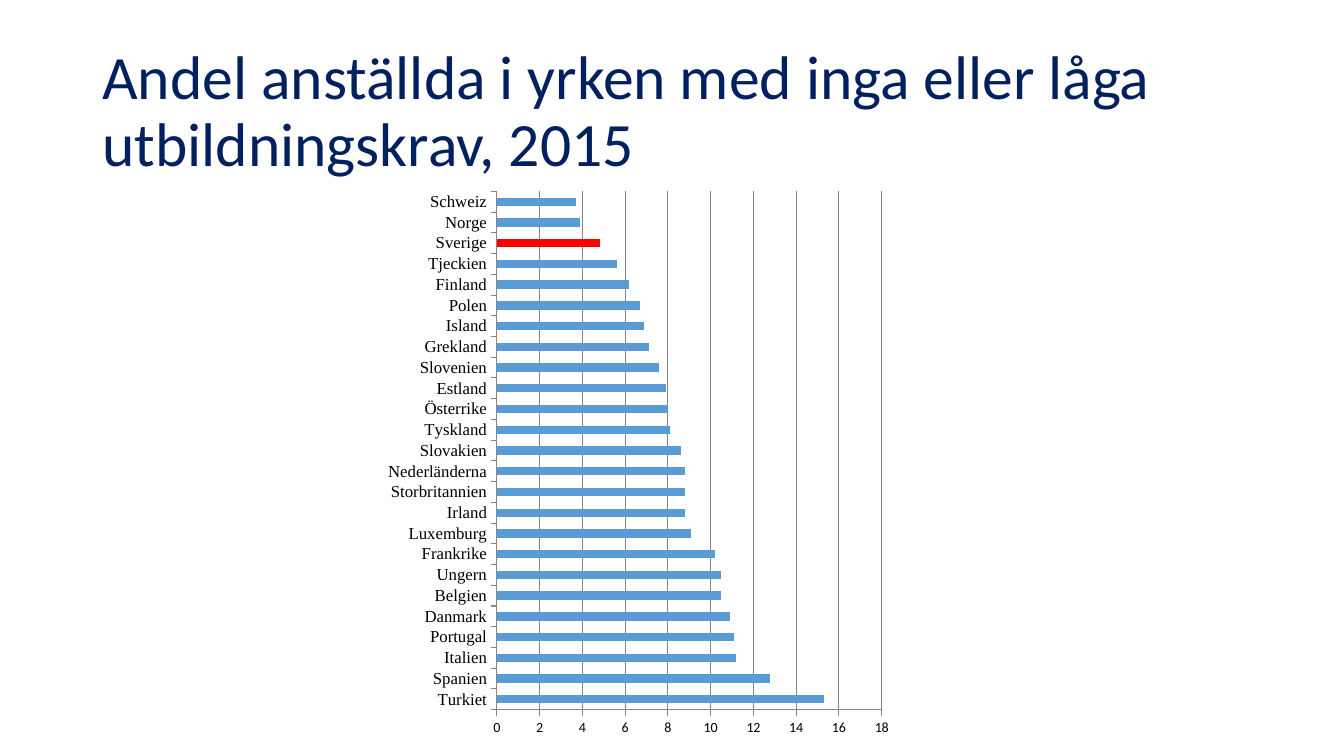
"""Build a slide with a bar chart of jobs with low educational requirements."""
from dataclasses import dataclass

from pptx import Presentation
from pptx.chart.data import CategoryChartData
from pptx.dml.color import RGBColor
from pptx.enum.chart import XL_CHART_TYPE, XL_TICK_MARK
from pptx.enum.text import MSO_ANCHOR
from pptx.oxml import parse_xml
from pptx.oxml.ns import nsdecls
from pptx.util import Emu, Pt

BAR_CLUSTERED = XL_CHART_TYPE.BAR_CLUSTERED
TICK_OUT, TICK_NONE = XL_TICK_MARK.OUTSIDE, XL_TICK_MARK.NONE
MIDDLE = MSO_ANCHOR.MIDDLE
EMU_PER_PX = 9525
SANS, SERIF = "Calibri", "Times New Roman"
NAVY, BLUE, RED, GREY, BLACK = "002060", "5B9BD5", "FF0000", "868686", "000000"


@dataclass(frozen=True)
class Box:
    left: int
    top: int
    width: int
    height: int

    def emu(self) -> tuple[Emu, ...]:
        return tuple(px(v) for v in (self.left, self.top, self.width, self.height))


@dataclass(frozen=True)
class Country:
    name: str
    share: float
    color: str = BLUE


COUNTRIES = [
    Country("Turkiet", 15.3),
    Country("Spanien", 12.8),
    Country("Italien", 11.2),
    Country("Portugal", 11.1),
    Country("Danmark", 10.9),
    Country("Belgien", 10.5),
    Country("Ungern", 10.5),
    Country("Frankrike", 10.2),
    Country("Luxemburg", 9.1),
    Country("Irland", 8.8),
    Country("Storbritannien", 8.8),
    Country("Nederländerna", 8.8),
    Country("Slovakien", 8.6),
    Country("Tyskland", 8.1),
    Country("Österrike", 8),
    Country("Estland", 7.9),
    Country("Slovenien", 7.6),
    Country("Grekland", 7.1),
    Country("Island", 6.9),
    Country("Polen", 6.7),
    Country("Finland", 6.2),
    Country("Tjeckien", 5.6),
    Country("Sverige", 4.8, RED),
    Country("Norge", 3.9),
    Country("Schweiz", 3.7),
]


def px(value: int) -> Emu:
    return Emu(value * EMU_PER_PX)


def rgb(color: str) -> RGBColor:
    return RGBColor.from_string(color)


def set_font(font, *, size: int, name: str, color: str) -> None:
    font.size, font.name, font.bold = Pt(size), name, False
    font.color.rgb = rgb(color)


def add_text(s, box: Box, text: str, *, size: int, name: str, color: str,
             line_spacing: float, anchor=MIDDLE) -> None:
    tf = s.shapes.add_textbox(*box.emu()).text_frame
    tf.word_wrap, tf.vertical_anchor = True, anchor
    p = tf.paragraphs[0]
    p.line_spacing = line_spacing
    r = p.add_run()
    r.text = text
    set_font(r.font, size=size, name=name, color=color)


def style_axis(axis, *, size: int, name: str) -> None:
    axis.major_tick_mark, axis.minor_tick_mark = TICK_OUT, TICK_NONE
    axis.format.line.color.rgb = rgb(GREY)
    axis.format.line.width = Pt(0.75)
    set_font(axis.tick_labels.font, size=size, name=name, color=BLACK)


def set_plot_area(chart, x: float, y: float, w: float, h: float) -> None:
    area = chart.element.xpath("c:chart/c:plotArea")[0]
    for old in area.xpath("c:layout"):
        area.remove(old)
    sizes = "".join(f'<c:{tag} val="{val}"/>'
                    for tag, val in zip("xywh", (x, y, w, h)))
    area.insert(0, parse_xml(
        f'<c:layout {nsdecls("c")}><c:manualLayout><c:layoutTarget val="inner"/>'
        f'<c:xMode val="edge"/><c:yMode val="edge"/>{sizes}'
        '</c:manualLayout></c:layout>'))


def add_bar_chart(s, box: Box, countries: list[Country]) -> None:
    data = CategoryChartData()
    data.categories = [c.name for c in countries]
    data.add_series("Series 1", [c.share for c in countries])
    chart = s.shapes.add_chart(BAR_CLUSTERED, *box.emu(), data).chart
    chart.has_legend = chart.has_title = False
    set_font(chart.font, size=10, name=SANS, color=BLACK)

    plot = chart.plots[0]
    plot.gap_width, plot.vary_by_categories = 150, False
    series = plot.series[0]
    series.format.fill.solid()
    series.format.fill.fore_color.rgb = rgb(BLUE)
    for i, country in enumerate(countries):
        if country.color != BLUE:
            fill = series.points[i].format.fill
            fill.solid()
            fill.fore_color.rgb = rgb(country.color)

    style_axis(chart.category_axis, size=12, name=SERIF)
    values = chart.value_axis
    style_axis(values, size=10, name=SANS)
    values.minimum_scale, values.maximum_scale, values.major_unit = 0, 18, 2
    values.has_major_gridlines = True
    values.major_gridlines.format.line.color.rgb = rgb(GREY)
    values.major_gridlines.format.line.width = Pt(0.75)
    set_plot_area(chart, 0.236, 0.035, 0.713, 0.896)


def main() -> None:
    prs = Presentation()
    prs.slide_width, prs.slide_height = px(1280), px(720)
    s = prs.slides.add_slide(prs.slide_layouts[6])
    add_text(s, Box(88, 38, 1104, 139),
             "Andel anställda i yrken med inga eller låga utbildningskrav, 2015",
             size=44, name=SANS, color=NAVY, line_spacing=0.9)
    add_bar_chart(s, Box(352, 163, 514, 551), COUNTRIES)
    prs.save("out.pptx")


if __name__ == "__main__":
    main()
